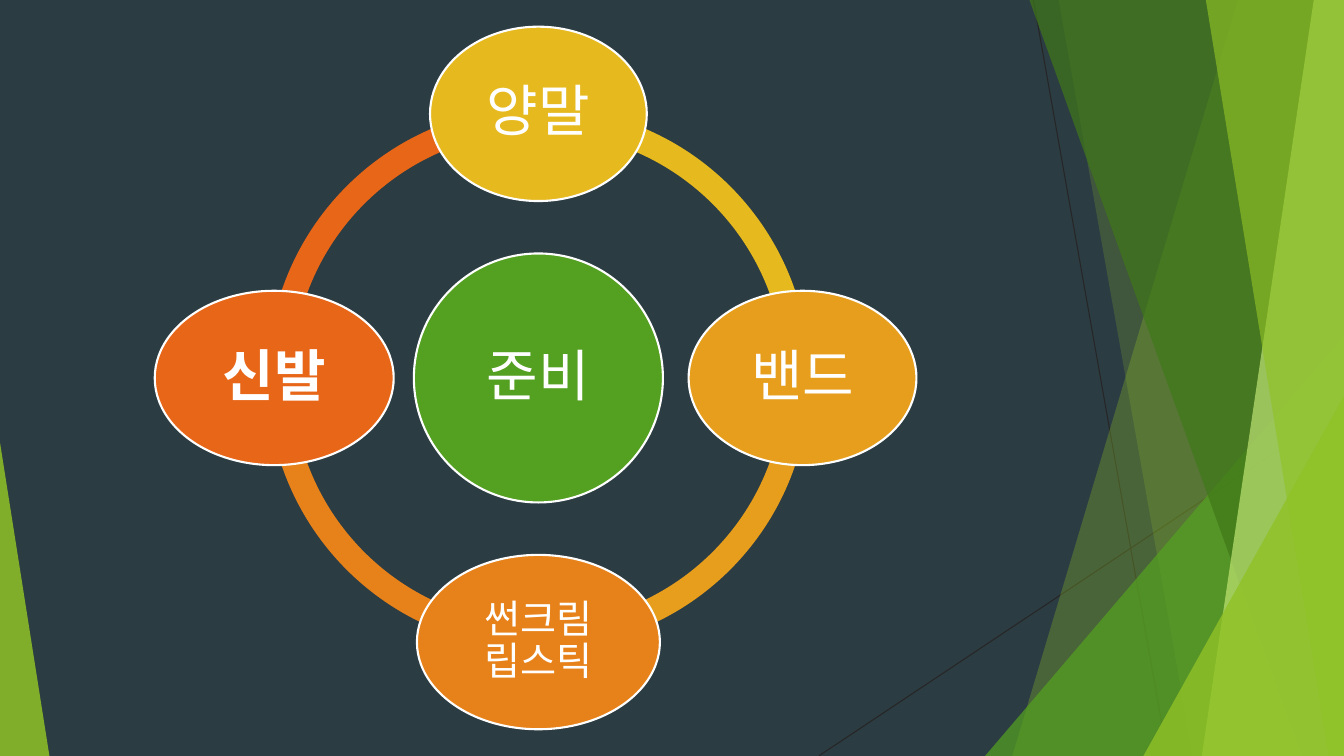
from dataclasses import dataclass

from lxml.etree import SubElement
from pptx import Presentation
from pptx.dml.color import RGBColor
from pptx.enum.shapes import MSO_CONNECTOR, MSO_SHAPE
from pptx.enum.text import MSO_ANCHOR, PP_ALIGN
from pptx.oxml.ns import qn
from pptx.shapes.autoshape import Shape
from pptx.slide import Slide
from pptx.util import Inches, Pt

COLORS = {
    "background": "2C3C43",
    "hairline": "262626",
    "lime": "90C226",
    "green": "54A021",
    "forest": "3F7819",
    "pale": "C0E474",
    "gold": "E6B91E",
    "amber": "E69E1C",
    "orange": "E7821A",
    "red": "E76618",
    "white": "FFFFFF",
}
WIDTH, HEIGHT = 13.33, 7.5
CENTER_X, CENTER_Y = 5.34, 3.75
ORBIT = 2.62
RING_SIZE = 5.38
RING_THICKNESS = 0.046
QUARTER_TURN = 54
NODE_HEIGHT = 1.73
HUB_SIZE = 2.47


@dataclass
class Panel:
    top_x: float
    bottom_x: float
    color: str
    opacity: int


@dataclass
class Wedge:
    left: float
    top: float
    width: float
    apex: float
    color: str
    opacity: int


@dataclass
class Node:
    text: str
    step_x: int
    step_y: int
    width: float
    color: str
    size: int = 40
    inset: float = 0.06
    bold: bool = False


HAIRLINES = [(10.25, 0, 11.58, HEIGHT), (WIDTH, 4.03, 8.12, HEIGHT)]

FACETS = [
    Panel(12.28, 10.04, "lime", 30),
    Panel(10.5, 11.83, "lime", 20),
    Wedge(9.77, 3.33, 3.56, 1, "green", 72),
    Panel(10.21, 12.91, "forest", 70),
    Panel(13.03, 11.92, "pale", 70),
    Panel(11.96, 13.18, "lime", 65),
    Wedge(11.34, 3.93, 1.99, 1, "lime", 80),
    Wedge(0, 4.39, 0.49, 0, "lime", 85),
]

NODES = [
    Node("양말", 0, -1, 2.15, "gold"),
    Node("밴드", 1, 0, 2.26, "amber"),
    Node("썬크림 립스틱", 0, 1, 2.41, "orange", size=28, inset=0.04),
    Node("신발", -1, 0, 2.37, "red", bold=True),
]


def rgb(color: str) -> RGBColor:
    return RGBColor.from_string(COLORS[color])


def paint(shape: Shape, color: str, opacity: int = 100) -> None:
    shape.shadow.inherit = False
    shape.fill.solid()
    shape.fill.fore_color.rgb = rgb(color)
    shape.line.fill.background()
    if opacity < 100:
        color_element = shape.fill._xPr.find(qn("a:solidFill"))[0]
        SubElement(color_element, qn("a:alpha"), val=str(opacity * 1000))


def write_text(shape: Shape, text: str, *, size: int = 40, inset: float = 0.06, bold: bool = False) -> None:
    frame = shape.text_frame
    frame.word_wrap = True
    frame.vertical_anchor = MSO_ANCHOR.MIDDLE
    frame.margin_left = frame.margin_right = Inches(inset)
    frame.margin_top = frame.margin_bottom = Inches(inset)
    paragraph = frame.paragraphs[0]
    paragraph.alignment = PP_ALIGN.CENTER
    paragraph.line_spacing = 0.9
    run = paragraph.add_run()
    run.text = text
    run.font.name = "Roboto"
    run.font.size = Pt(size)
    run.font.bold = bold
    run.font.color.rgb = rgb("white")


def add_hairline(slide: Slide, start_x: float, start_y: float, end_x: float, end_y: float) -> None:
    connector = slide.shapes.add_connector(
        MSO_CONNECTOR.STRAIGHT, Inches(start_x), Inches(start_y), Inches(end_x), Inches(end_y)
    )
    connector.line.color.rgb = rgb("hairline")
    connector.line.width = Pt(0.75)
    SubElement(connector._element.spPr, qn("a:effectLst"))


def add_panel(slide: Slide, panel: Panel) -> None:
    builder = slide.shapes.build_freeform(Inches(panel.top_x), 0)
    corners = [(WIDTH, 0), (WIDTH, HEIGHT), (panel.bottom_x, HEIGHT)]
    builder.add_line_segments([(Inches(x), Inches(y)) for x, y in corners], close=True)
    paint(builder.convert_to_shape(), panel.color, panel.opacity)


def add_wedge(slide: Slide, wedge: Wedge) -> None:
    shape = slide.shapes.add_shape(
        MSO_SHAPE.ISOSCELES_TRIANGLE,
        Inches(wedge.left), Inches(wedge.top), Inches(wedge.width), Inches(HEIGHT - wedge.top),
    )
    shape.adjustments[0] = wedge.apex
    paint(shape, wedge.color, wedge.opacity)


def add_centered(
    slide: Slide, kind: MSO_SHAPE, x: float, y: float, width: float, height: float, color: str
) -> Shape:
    shape = slide.shapes.add_shape(
        kind, Inches(x - width / 2), Inches(y - height / 2), Inches(width), Inches(height)
    )
    paint(shape, color)
    return shape


def add_arc(slide: Slide, index: int, color: str) -> None:
    arc = add_centered(slide, MSO_SHAPE.BLOCK_ARC, CENTER_X, CENTER_Y, RING_SIZE, RING_SIZE, color)
    arc.adjustments[0] = (index + 3) % 4 * QUARTER_TURN
    arc.adjustments[1] = index * QUARTER_TURN
    arc.adjustments[2] = RING_THICKNESS


def add_disc(slide: Slide, x: float, y: float, width: float, height: float, color: str) -> Shape:
    disc = add_centered(slide, MSO_SHAPE.OVAL, x, y, width, height, color)
    disc.line.color.rgb = rgb("white")
    disc.line.width = Pt(1.5)
    return disc


def add_node(slide: Slide, node: Node) -> None:
    x, y = CENTER_X + node.step_x * ORBIT, CENTER_Y + node.step_y * ORBIT
    disc = add_disc(slide, x, y, node.width, NODE_HEIGHT, node.color)
    write_text(disc, node.text, size=node.size, inset=node.inset, bold=node.bold)


def main() -> None:
    presentation = Presentation()
    presentation.slide_width = Inches(WIDTH)
    presentation.slide_height = Inches(HEIGHT)
    slide = presentation.slides.add_slide(presentation.slide_layouts[6])
    slide.background.fill.solid()
    slide.background.fill.fore_color.rgb = rgb("background")

    for hairline in HAIRLINES:
        add_hairline(slide, *hairline)
    for facet in FACETS:
        if isinstance(facet, Panel):
            add_panel(slide, facet)
        else:
            add_wedge(slide, facet)

    for index, node in reversed(list(enumerate(NODES))):
        add_arc(slide, index, node.color)
    hub = add_disc(slide, CENTER_X, CENTER_Y, HUB_SIZE, HUB_SIZE, "green")
    write_text(hub, "준비")
    for node in NODES:
        add_node(slide, node)

    presentation.save("out.pptx")


if __name__ == "__main__":
    main()
